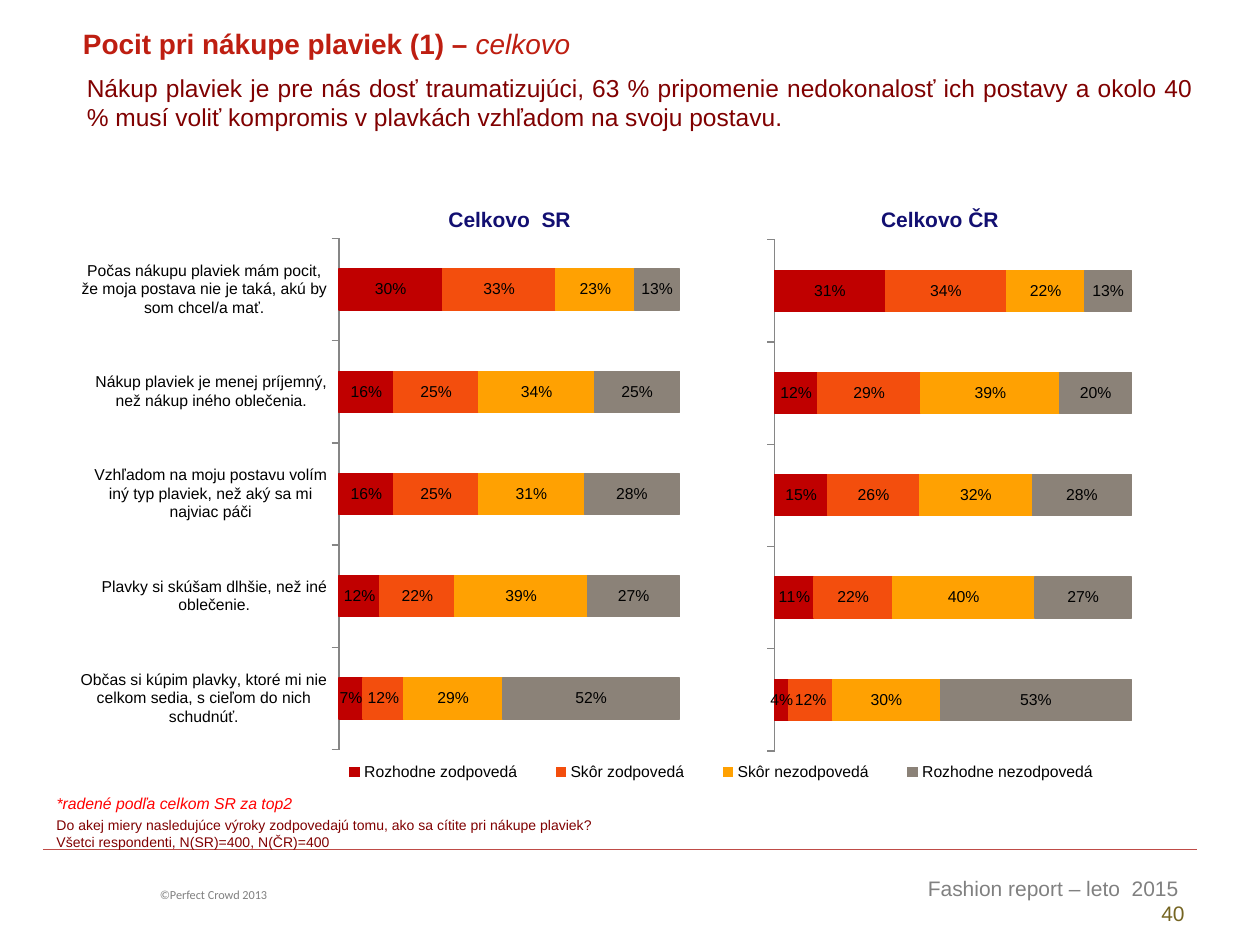
from dataclasses import dataclass
from typing import NamedTuple

from lxml import etree
from pptx import Presentation
from pptx import util as u
from pptx.chart.data import CategoryChartData
from pptx.dml.color import RGBColor
from pptx.enum import chart as ch, shapes, text
from pptx.oxml import parse_xml
from pptx.oxml.ns import nsdecls, qn


@dataclass(frozen=True)
class Theme:
    font: str = "Arial"
    small_font: str = "Calibri"
    title: str = "BE1E11"
    body: str = "800000"
    note: str = "FF0000"
    header: str = "120F71"
    muted: str = "808080"
    page: str = "756522"
    rule: str = "BF4C48"
    axis: str = "868686"
    label: str = "000000"
    series: tuple = ("C00000", "F34E0D", "FFA102", "8B8278")
    title_pt: float = 16
    lead_pt: float = 14
    header_pt: float = 12
    chart_pt: float = 9
    question_pt: float = 8
    copyright_pt: float = 7
    line_pt: float = 0.75


class Box(NamedTuple):
    """Left, top, width and height in percent of the slide."""
    x: float
    y: float
    w: float
    h: float

    def emu(self) -> tuple:
        return px(self.x), py(self.y), px(self.w), py(self.h)


class Run(NamedTuple):
    text: str
    color: str
    size: float
    bold: bool = False
    italic: bool = False
    font: str = "Arial"


class TextBlock(NamedTuple):
    box: Box
    paragraphs: list  # one list of runs per paragraph
    align: text.PP_ALIGN = text.PP_ALIGN.LEFT
    wrap: bool = True


class Country(NamedTuple):
    box: Box
    plot_width: float  # share of the chart
    series: list
    main: bool  # carries the statements and the legend


T = Theme()
W, H = u.Inches(10), u.Inches(7.5)
STATEMENTS = [
    "Počas nákupu plaviek mám pocit, že moja postava nie je taká, akú by som chcel/a mať.",
    "Nákup plaviek je menej príjemný, než nákup iného oblečenia.",
    "Vzhľadom na moju postavu volím iný typ plaviek, než aký sa mi najviac páči",
    "Plavky si skúšam dlhšie, než iné oblečenie.",
    "Občas si kúpim plavky, ktoré mi nie celkom sedia, s cieľom do nich schudnúť.",
]
ANSWERS = ["Rozhodne zodpovedá", "Skôr zodpovedá", "Skôr nezodpovedá", "Rozhodne nezodpovedá"]
COUNTRIES = [
    Country(Box(6.4, 23.6, 92.2, 60.53), 0.294,
            [(30, 16, 16, 12, 7), (33, 25, 25, 22, 12),
             (23, 34, 31, 39, 29), (13, 25, 28, 27, 52)], True),
    Country(Box(41.2, 23.73, 92.2, 60.53), 0.307,
            [(31, 12, 15, 11, 4), (34, 29, 26, 22, 12),
             (22, 39, 32, 40, 30), (13, 20, 28, 27, 53)], False),
]
BLOCKS = [
    TextBlock(Box(11.7, 93.2, 29.1, 2.93),
              [[Run("©Perfect Crowd 2013", T.muted, T.copyright_pt, font=T.small_font)]]),
    TextBlock(Box(57.9, 92, 37.1, 6.67),
              [[Run("Fashion report – leto  2015 ", T.muted, T.header_pt)],
               [Run("40", T.page, T.header_pt)]], text.PP_ALIGN.RIGHT),
    TextBlock(Box(5.6, 2.13, 75.1, 4.93),
              [[Run("Pocit pri nákupe plaviek (1) – ", T.title, T.title_pt, bold=True),
                Run("celkovo", T.title, T.title_pt, italic=True)]]),
    TextBlock(Box(3.5, 85.73, 90.6, 4.93),
              [[Run("Do akej miery nasledujúce výroky zodpovedajú tomu, ako sa cítite "
                    "pri nákupe plaviek?", T.body, T.question_pt)],
               [Run("Všetci respondenti, N(SR)=400, N(ČR)=400", T.body, T.question_pt)]]),
    TextBlock(Box(5.9, 7.07, 89.8, 10.8),
              [[Run("Nákup plaviek je pre nás dosť traumatizujúci, 63 % pripomenie "
                    "nedokonalosť ich postavy a okolo 40 % musí voliť kompromis v plavkách "
                    "vzhľadom na svoju postavu.", T.body, T.lead_pt)]], text.PP_ALIGN.JUSTIFY),
    TextBlock(Box(3.5, 83.33, 21.2, 3.33),
              [[Run("*radené podľa celkom SR za top2", T.note, T.chart_pt, italic=True)]],
              wrap=False),
]


def px(share: float) -> int:
    return int(W * share / 100)


def py(share: float) -> int:
    return int(H * share / 100)


def add_run(p, run: Run) -> None:
    r = p.add_run()
    r.text = run.text
    f = r.font
    f.name, f.size, f.bold, f.italic = run.font, u.Pt(run.size), run.bold, run.italic
    f.color.rgb = RGBColor.from_string(run.color)


def add_text(s, block: TextBlock) -> None:
    tf = s.shapes.add_textbox(*block.box.emu()).text_frame
    tf.word_wrap = block.wrap
    for i, runs in enumerate(block.paragraphs):
        p = tf.add_paragraph() if i else tf.paragraphs[0]
        p.alignment = block.align
        for run in runs:
            add_run(p, run)


def add_rule(s, left: float, right: float, y: float) -> None:
    sp = s.shapes.add_connector(shapes.MSO_CONNECTOR.STRAIGHT, px(left), py(y), px(right), py(y))
    sp.line.color.rgb = RGBColor.from_string(T.rule)
    sp.line.width = u.Pt(T.line_pt)
    etree.SubElement(sp._element.spPr, qn("a:effectLst"))


def add_headers(s, box: Box, columns: list) -> None:
    """Columns hold a label, a width and a left margin, in slide percent."""
    table = s.shapes.add_table(1, len(columns), *box.emu()).table
    table.first_row = table.horz_banding = False
    for i, (label, width, margin) in enumerate(columns):
        table.columns[i].width = px(width)
        cell = table.cell(0, i)
        cell.fill.background()
        cell.vertical_anchor = text.MSO_ANCHOR.MIDDLE
        cell.margin_left, cell.margin_right = px(margin), u.Inches(0.01)
        cell.margin_top, cell.margin_bottom = u.Inches(0.01), 0
        p = cell.text_frame.paragraphs[0]
        p.alignment = text.PP_ALIGN.CENTER
        add_run(p, Run(label, T.header, T.header_pt, bold=True))


def place(parent, index: int, shares: tuple, inner: bool = False) -> None:
    """Fix a chart part at x, y, w, h as shares of the chart."""
    for old in parent.findall(qn("c:layout")):
        parent.remove(old)
    target = '<c:layoutTarget val="inner"/>' if inner else ""
    modes = '<c:xMode val="edge"/><c:yMode val="edge"/>'
    sizes = "".join(f'<c:{k} val="{v}"/>' for k, v in zip("xywh", shares))
    parent.insert(index, parse_xml(
        f'<c:layout {nsdecls("c")}><c:manualLayout>{target}{modes}{sizes}'
        "</c:manualLayout></c:layout>"))


def add_bars(s, country: Country) -> None:
    data = CategoryChartData()
    data.categories = STATEMENTS if country.main else ["1", "2", "3", "4", "5"]
    for name, values in zip(ANSWERS, country.series):
        data.add_series(name, values)
    chart = s.shapes.add_chart(ch.XL_CHART_TYPE.BAR_STACKED_100, *country.box.emu(), data).chart
    chart.has_title = False
    chart.font.name, chart.font.size = T.font, u.Pt(T.chart_pt)
    chart.font.color.rgb = RGBColor.from_string(T.label)

    # Bars and labels
    plot = chart.plots[0]
    plot.gap_width, plot.overlap, plot.vary_by_categories = 150, 100, False
    for series, color in zip(plot.series, T.series):
        rgb = RGBColor.from_string(color)
        series.format.fill.solid()
        series.format.fill.fore_color.rgb = rgb
        series.format.line.color.rgb = rgb
        series.format.line.width = u.Pt(T.line_pt)
        labels = series.data_labels
        labels.show_value = True
        labels.position = ch.XL_LABEL_POSITION.CENTER
        labels.number_format, labels.number_format_is_linked = '#,##0"%"', False

    # Axes
    axis = chart.category_axis
    axis.reverse_order = True
    axis.major_tick_mark = ch.XL_TICK_MARK.OUTSIDE
    axis.format.line.color.rgb = RGBColor.from_string(T.axis)
    if not country.main:
        axis.tick_label_position = ch.XL_TICK_LABEL_POSITION.NONE
    chart.value_axis.visible = chart.value_axis.has_major_gridlines = False

    # Legend, plot area and clear background
    chart.has_legend = country.main
    if country.main:
        chart.legend.position = ch.XL_LEGEND_POSITION.BOTTOM
        chart.legend.include_in_layout = False
        place(chart.legend._element, 1, (0.2, 0.93, 0.7, 0.06))
    root = chart._chartSpace.find(qn("c:chart"))
    place(root.find(qn("c:plotArea")), 0, (0.22, 0.027, country.plot_width, 0.894), inner=True)
    root.addnext(parse_xml(f'<c:spPr {nsdecls("c", "a")}><a:noFill/>'
                           "<a:ln><a:noFill/></a:ln></c:spPr>"))


def main() -> None:
    prs = Presentation()
    prs.slide_width, prs.slide_height = W, H
    s = prs.slides.add_slide(prs.slide_layouts[6])
    add_rule(s, 3.4, 95, 89.87)
    for block in BLOCKS:
        add_text(s, block)
    add_headers(s, Box(32, 20.93, 49.5, 4.53),
                [("Celkovo  SR", 16.9, 0.1), ("Celkovo ČR", 32.6, 18.9)])
    for country in COUNTRIES:
        add_bars(s, country)
    prs.save("out.pptx")


if __name__ == "__main__":
    main()
